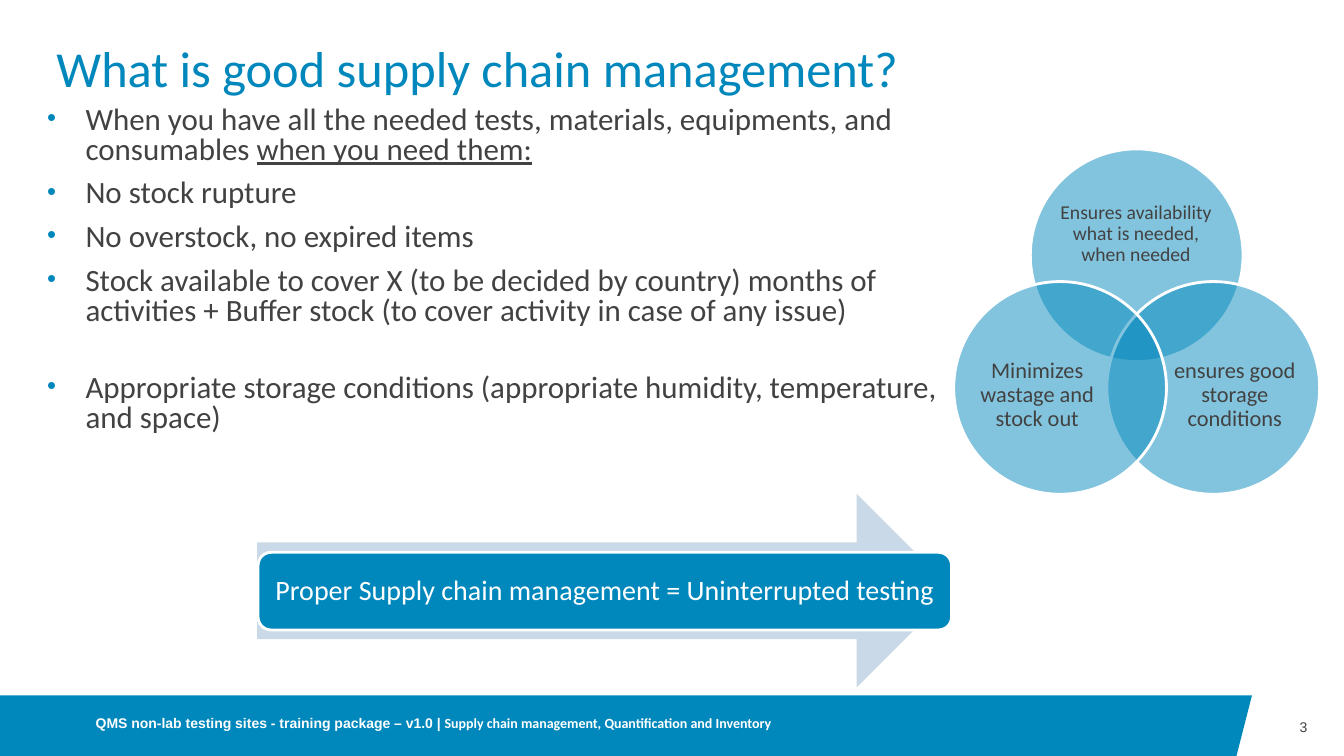
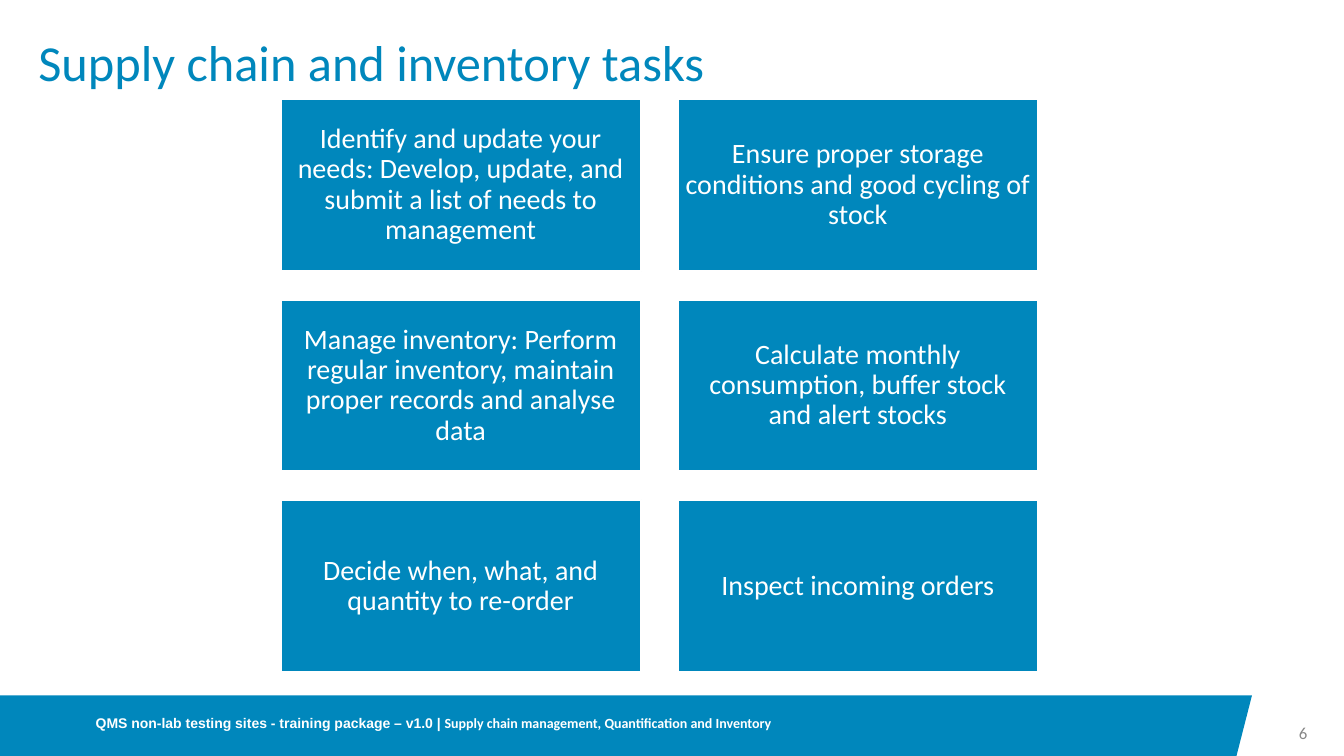
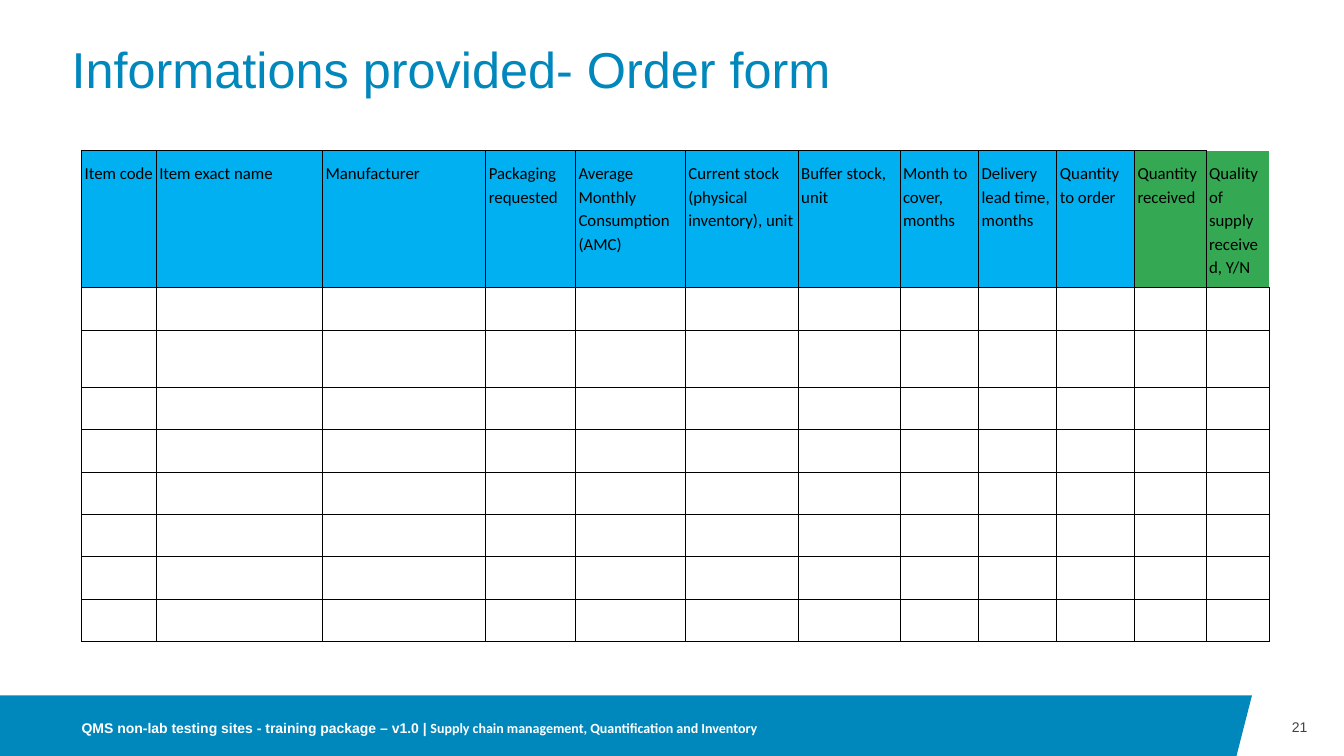
from dataclasses import dataclass
from math import cos, radians, sin
from typing import NamedTuple

from lxml.etree import SubElement
from pptx import Presentation
from pptx.dml.color import RGBColor
from pptx.enum.shapes import MSO_SHAPE as Preset
from pptx.enum.text import MSO_ANCHOR as Anchor, PP_ALIGN as Align
from pptx.oxml.ns import qn
from pptx.util import Inches, Pt

SLIDE_WIDTH, SLIDE_HEIGHT = Inches(13.33), Inches(7.5)
COLUMN, ROW = SLIDE_WIDTH / 40, SLIDE_HEIGHT / 30
COLUMNS_PER_ROW = ROW / COLUMN
COLORS = {
    "brand": "0087BC",
    "body": "424242",
    "muted": "888888",
    "white": "FFFFFF",
    "black": "000000",
    "arrow": "CAD9E7",
    "ordered": "00B0F0",
    "received": "34A853",
}


class Area(NamedTuple):
    """Place and size in grid columns and rows."""
    col: float
    row: float
    cols: float
    rows: float

    def emu(self) -> tuple[int, int, int, int]:
        """Return left, top, width and height in slide units."""
        return (round(self.col * COLUMN), round(self.row * ROW),
                round(self.cols * COLUMN), round(self.rows * ROW))


class Span(NamedTuple):
    """One run of text."""
    text: str
    underline: bool = False
    bold: bool = False
    font: str = "Calibri"


@dataclass(frozen=True)
class Style:
    """How a block of text looks."""
    size: float
    color: str
    align: Align = Align.LEFT
    anchor: Anchor = Anchor.MIDDLE
    spacing: float = 0.9
    inset: float = 0


@dataclass(frozen=True)
class Bullet:
    """One bulleted paragraph and the space before it."""
    spans: tuple[Span, ...]
    before: float = 10


@dataclass(frozen=True)
class Frame:
    """Title, page number and footer place of a slide."""
    title: Span
    title_at: tuple[float, float]
    number: Span
    number_row: float
    number_style: Style
    footer_at: tuple[float, float]


@dataclass(frozen=True)
class Goal:
    """One circle of the Venn diagram with its label."""
    label: str
    angle: float
    label_area: Area
    size: float


@dataclass(frozen=True)
class Field:
    """One column of the order form."""
    heading: str
    cols: float
    fill: str = "ordered"


TITLE = Style(36, "brand")
FOOTER = Style(10, "white", spacing=1)
NUMBER = Style(10, "body", Align.RIGHT, spacing=1)
SMALL_NUMBER = Style(12, "muted", Align.RIGHT, spacing=1)
BODY = Style(22.1, "body", anchor=Anchor.TOP, spacing=0.8, inset=0.05)
BOX_LABEL = Style(20, "white", Align.CENTER, inset=0.08)
FORM_HEADING = Style(12, "black", anchor=Anchor.TOP, spacing=1.15)

FOOTER_SPANS = (
    Span("QMS non-lab testing sites - training package – v1.0 | ", bold=True, font="Arial"),
    Span("Supply chain management, Quantification and Inventory", bold=True),
)
FRAMES = (
    Frame(Span("What is good supply chain management?"), (1.68, 0.76),
          Span("3", font="Arial"), 27.95, NUMBER, (2.85, 27.6)),
    Frame(Span("Supply chain and inventory tasks"), (1.14, 0.54),
          Span("6"), 28.18, SMALL_NUMBER, (2.85, 27.6)),
    Frame(Span("Informations provided- Order form", font="Arial"), (2.13, 0.8),
          Span("21", font="Arial"), 27.95, NUMBER, (2.43, 27.8)),
)
BULLETS = (
    Bullet((Span("When you have all the needed tests, materials, equipments, and consumables "),
            Span("when you need them:", underline=True))),
    Bullet((Span("No stock rupture"),)),
    Bullet((Span("No overstock, no expired items"),)),
    Bullet((Span("Stock available to cover X (to be decided by country) months of activities"
                 " + Buffer stock (to cover activity in case of any issue)"),)),
    Bullet((Span("Appropriate storage conditions (appropriate humidity, temperature, and space)"),),
           before=34),
)
GOALS = (
    Goal("Ensures availability what is needed, when needed", -90, Area(31.5, 7.4, 4.62, 3.8), 14),
    Goal("ensures good storage conditions", 30, Area(34.86, 13.36, 3.78, 4.64), 16),
    Goal("Minimizes wastage and stock out", 150, Area(28.98, 13.36, 3.78, 4.64), 16),
)
TASKS = (
    "Identify and update your needs: Develop, update, and submit a list of needs to management",
    "Ensure proper storage conditions and good cycling of stock",
    "Manage inventory: Perform regular inventory, maintain proper records and analyse data",
    "Calculate monthly consumption, buffer stock and alert stocks",
    "Decide when, what, and quantity to re-order",
    "Inspect incoming orders",
)
FIELDS = (
    Field("Item code", 2.22),
    Field("Item exact name", 4.95),
    Field("Manufacturer", 4.86),
    Field("Packaging requested", 2.67),
    Field("Average Monthly Consumption (AMC)", 3.27),
    Field("Current stock (physical inventory), unit", 3.36),
    Field("Buffer stock, unit", 3.03),
    Field("Month to cover, months", 2.34),
    Field("Delivery lead time, months", 2.33),
    Field("Quantity to order", 2.31),
    Field("Quantity received", 2.13, "received"),
    Field("Quality of supply received, Y/N", 1.89, "received"),
)
FORM_ROWS = (5.44, 1.68, 2.28) + (1.68,) * 6


def rgb(name: str) -> RGBColor:
    """Look up a colour by name."""
    return RGBColor.from_string(COLORS[name])


def add_runs(paragraph, spans: tuple[Span, ...], style: Style) -> None:
    """Fill a paragraph run by run."""
    paragraph.alignment = style.align
    paragraph.line_spacing = style.spacing
    for span in spans:
        run = paragraph.add_run()
        run.text = span.text
        font = run.font
        font.name, font.size, font.bold = span.font, Pt(style.size), span.bold
        font.underline = span.underline
        font.color.rgb = rgb(style.color)


def set_frame(frame, style: Style) -> None:
    """Set wrapping, anchor and insets of a text frame."""
    frame.word_wrap = True
    frame.vertical_anchor = style.anchor
    frame.margin_left = frame.margin_right = Inches(style.inset)
    frame.margin_top = frame.margin_bottom = Inches(style.inset)


def add_text(slide, area: Area, spans: tuple[Span, ...], style: Style) -> None:
    """Add a one-paragraph text box."""
    frame = slide.shapes.add_textbox(*area.emu()).text_frame
    set_frame(frame, style)
    add_runs(frame.paragraphs[0], spans, style)


def paint(shape, fill: str, outlined: bool = False) -> None:
    """Give a shape a flat fill and an optional white outline."""
    shape.shadow.inherit = False
    shape.fill.solid()
    shape.fill.fore_color.rgb = rgb(fill)
    if outlined:
        shape.line.color.rgb = rgb("white")
        shape.line.width = Pt(2)
    else:
        shape.line.fill.background()


def add_box(slide, preset: Preset, area: Area, label: str) -> None:
    """Add a brand-coloured box with a centred label."""
    box = slide.shapes.add_shape(preset, *area.emu())
    paint(box, "brand", outlined=True)
    set_frame(box.text_frame, BOX_LABEL)
    add_runs(box.text_frame.paragraphs[0], (Span(label),), BOX_LABEL)


def add_frame(slide, frame: Frame) -> None:
    """Draw the band, title, page number and footer."""
    corners = [(round(col * COLUMN), round(row * ROW))
               for col, row in ((0, 27.6), (37.26, 27.6), (36.8, 30), (0, 30))]
    outline = slide.shapes.build_freeform(*corners[0])
    outline.add_line_segments(corners[1:], close=True)
    paint(outline.convert_to_shape(), "brand")
    add_text(slide, Area(*frame.title_at, 34.5, 4.12), (frame.title,), TITLE)
    add_text(slide, Area(37.26, frame.number_row, 1.65, 1.8), (frame.number,), frame.number_style)
    add_text(slide, Area(*frame.footer_at, 24, 2.2), FOOTER_SPANS, FOOTER)


def add_bullets(slide, area: Area) -> None:
    """Add the bulleted definition."""
    frame = slide.shapes.add_textbox(*area.emu()).text_frame
    set_frame(frame, BODY)
    frame.margin_left = frame.margin_right = Inches(0.1)
    for index, bullet in enumerate(BULLETS):
        paragraph = frame.add_paragraph() if index else frame.paragraphs[0]
        add_runs(paragraph, bullet.spans, BODY)
        paragraph.space_before = Pt(bullet.before)
        props = paragraph._p.get_or_add_pPr()
        props.set("marL", str(Inches(0.5)))
        props.set("indent", str(Inches(-0.38)))
        SubElement(SubElement(props, qn("a:buClr")), qn("a:srgbClr"), val=COLORS["brand"])
        SubElement(props, qn("a:buSzPct"), val="83000")
        SubElement(props, qn("a:buFont"), typeface="Arial")
        SubElement(props, qn("a:buChar"), char="•")


def add_venn(slide, col: float, row: float, orbit: float, diameter: float) -> None:
    """Draw translucent circles evenly around a centre, sized in rows."""
    for goal in GOALS:
        center_col = col + orbit * cos(radians(goal.angle)) * COLUMNS_PER_ROW
        center_row = row + orbit * sin(radians(goal.angle))
        cols = diameter * COLUMNS_PER_ROW
        area = Area(center_col - cols / 2, center_row - diameter / 2, cols, diameter)
        circle = slide.shapes.add_shape(Preset.OVAL, *area.emu())
        paint(circle, "brand", outlined=True)
        tint = circle._element.spPr.find(qn("a:solidFill")).find(qn("a:srgbClr"))
        SubElement(tint, qn("a:alpha"), val="49000")
        add_text(slide, goal.label_area, (Span(goal.label),),
                 Style(goal.size, "body", Align.CENTER))


def add_conclusion(slide) -> None:
    """Draw the arrow and the conclusion on top of it."""
    arrow = slide.shapes.add_shape(Preset.RIGHT_ARROW, *Area(7.65, 19.6, 20.73, 7.68).emu())
    paint(arrow, "arrow")
    add_box(slide, Preset.ROUNDED_RECTANGLE, Area(7.68, 21.92, 20.64, 3.08),
            "Proper Supply chain management = Uninterrupted testing")


def add_tasks(slide) -> None:
    """Lay the tasks out in two columns."""
    for index, task in enumerate(TASKS):
        down, across = divmod(index, 2)
        area = Area(8.34 + across * 11.82, 3.92 + down * 7.96, 10.74, 6.84)
        add_box(slide, Preset.RECTANGLE, area, task)


def add_borders(cell, hidden: tuple[str, ...]) -> None:
    """Rule the four sides of a cell, leaving out the hidden ones."""
    props = cell._tc.get_or_add_tcPr()
    for position, side in enumerate(("lnL", "lnR", "lnT", "lnB")):
        line = props.makeelement(qn(f"a:{side}"), {"w": str(Pt(0.75))})
        props.insert(position, line)
        if side in hidden:
            SubElement(line, qn("a:noFill"))
        else:
            SubElement(SubElement(line, qn("a:solidFill")), qn("a:srgbClr"), val=COLORS["black"])


def add_order_form(slide) -> None:
    """Draw the order form with empty rows below its headings."""
    area = Area(2.43, 5.98, sum(field.cols for field in FIELDS), sum(FORM_ROWS))
    form = slide.shapes.add_table(len(FORM_ROWS), len(FIELDS), *area.emu()).table
    form.first_row = form.horz_banding = False
    for index, rows in enumerate(FORM_ROWS):
        form.rows[index].height = round(rows * ROW)
    for index, field in enumerate(FIELDS):
        form.columns[index].width = round(field.cols * COLUMN)
        for line in range(len(FORM_ROWS)):
            cell = form.cell(line, index)
            cell.margin_left = cell.margin_right = Inches(0.03)
            if line:
                cell.fill.background()
            else:
                cell.margin_top = cell.margin_bottom = Inches(0.1)
                cell.vertical_anchor = FORM_HEADING.anchor
                cell.fill.solid()
                cell.fill.fore_color.rgb = rgb(field.fill)
                add_runs(cell.text_frame.paragraphs[0], (Span(field.heading),), FORM_HEADING)
            open_corner = line == 0 and field is FIELDS[-1]
            add_borders(cell, ("lnR", "lnT") if open_corner else ())


def main() -> None:
    """Build and save the deck."""
    deck = Presentation()
    deck.slide_width, deck.slide_height = SLIDE_WIDTH, SLIDE_HEIGHT
    definition, tasks, order_form = (deck.slides.add_slide(deck.slide_layouts[6]) for _ in FRAMES)
    for slide, frame in zip((definition, tasks, order_form), FRAMES):
        add_frame(slide, frame)
    add_bullets(definition, Area(0.75, 4.04, 27.57, 16.56))
    add_venn(definition, 33.83, 13.64, 3.51, 8.44)
    add_conclusion(definition)
    add_tasks(tasks)
    add_order_form(order_form)
    deck.save("out.pptx")


if __name__ == "__main__":
    main()
